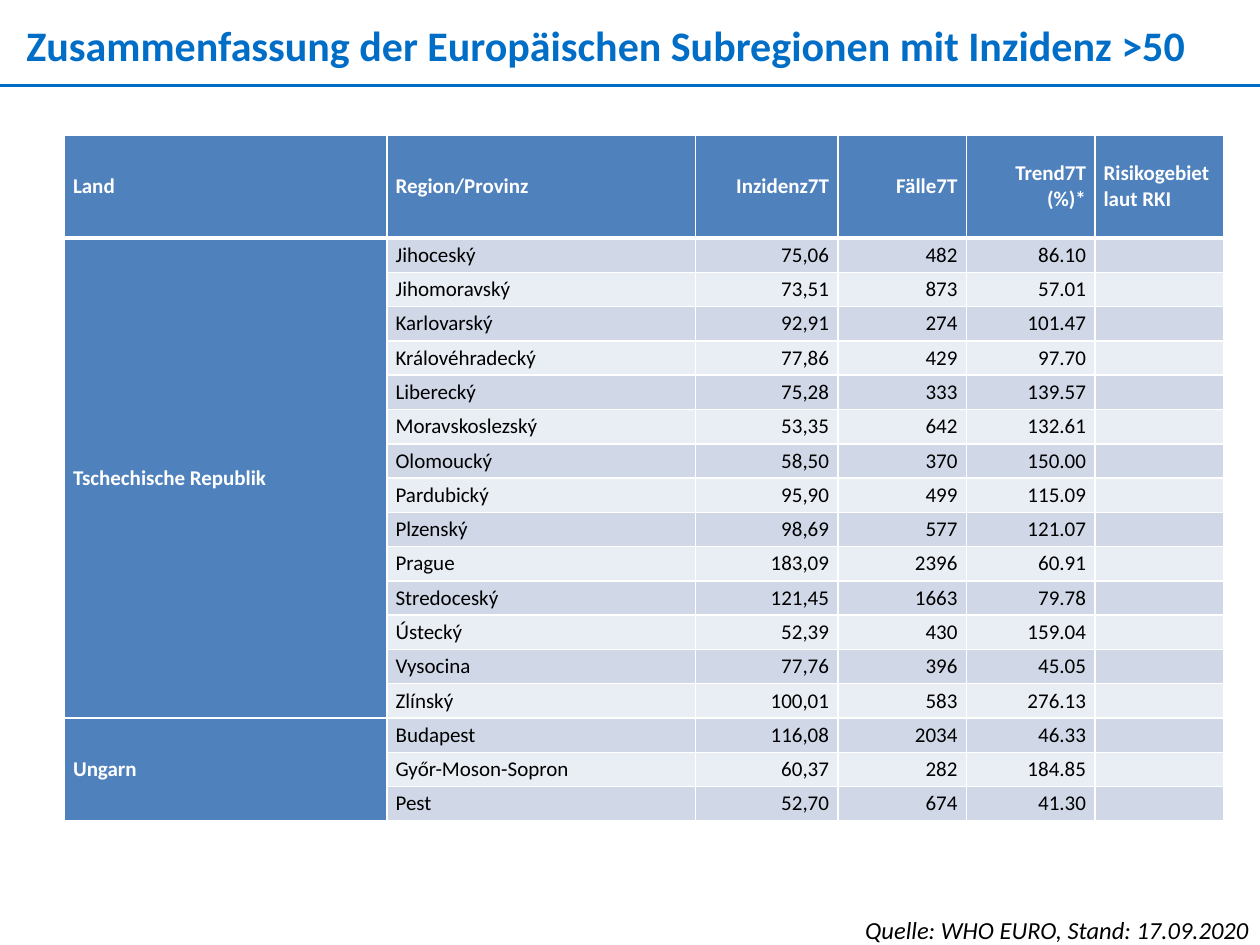
from dataclasses import dataclass

from lxml import etree
from pptx import Presentation
from pptx.dml.color import RGBColor
from pptx.enum.shapes import MSO_CONNECTOR
from pptx.enum.text import MSO_ANCHOR as Anchor, MSO_AUTO_SIZE as AutoSize, PP_ALIGN as Align
from pptx.oxml.ns import qn
from pptx.util import Emu, Inches, Pt


@dataclass(frozen=True)
class Theme:
    font: str = "Calibri"
    accent: str = "006EC7"
    header: str = "4F81BD"
    bands: tuple = ("D0D8E8", "E9EDF4")
    white: str = "FFFFFF"
    black: str = "000000"
    title: int = 24
    source: int = 14
    cell: int = 12


T = Theme()
W, H = Inches(10), Inches(7.5)
INDENT = Inches(0.07)
COLS = (2.56, 2.45, 1.13, 1.02, 1.02, 1.02)
HEADER_H, BODY_H = 0.82, 4.63
ALIGNS = (Align.LEFT, Align.LEFT, Align.RIGHT, Align.RIGHT, Align.RIGHT, Align.LEFT)
HEADERS = ("Land", "Region/Provinz", "Inzidenz7T", "Fälle7T",
           "Trend7T (%)*", "Risikogebiet laut RKI")
REGIONS = {
    "Tschechische Republik": (
        ("Jihoceský", "75,06", "482", "86.10"),
        ("Jihomoravský", "73,51", "873", "57.01"),
        ("Karlovarský", "92,91", "274", "101.47"),
        ("Královéhradecký", "77,86", "429", "97.70"),
        ("Liberecký", "75,28", "333", "139.57"),
        ("Moravskoslezský", "53,35", "642", "132.61"),
        ("Olomoucký", "58,50", "370", "150.00"),
        ("Pardubický", "95,90", "499", "115.09"),
        ("Plzenský", "98,69", "577", "121.07"),
        ("Prague", "183,09", "2396", "60.91"),
        ("Stredoceský", "121,45", "1663", "79.78"),
        ("Ústecký", "52,39", "430", "159.04"),
        ("Vysocina", "77,76", "396", "45.05"),
        ("Zlínský", "100,01", "583", "276.13"),
    ),
    "Ungarn": (
        ("Budapest", "116,08", "2034", "46.33"),
        ("Győr-Moson-Sopron", "60,37", "282", "184.85"),
        ("Pest", "52,70", "674", "41.30"),
    ),
}


def rgb(color):
    return RGBColor.from_string(color)


def write(tf, text, *, size, color=T.black, bold=False, italic=False,
          align=Align.LEFT, space=0, indent=0):
    p = tf.paragraphs[0]
    p.alignment = align
    p.space_before = p.space_after = Pt(space)
    for side in ("marL", "marR"):
        p._p.get_or_add_pPr().set(side, str(indent))
    if not text:
        # An empty cell keeps the row height through its end mark
        etree.SubElement(p._p, qn("a:endParaRPr"), sz=str(size * 100))
        return
    r = p.add_run()
    r.text = text
    f = r.font
    f.name, f.size, f.bold, f.italic = T.font, Pt(size), bold, italic
    f.color.rgb = rgb(color)


def set_margins(box, x=0, y=0):
    box.margin_left = box.margin_right = x
    box.margin_top = box.margin_bottom = y


def add_text(slide, text, left, top, width, height, margins=(0, 0), **fmt):
    tf = slide.shapes.add_textbox(left, top, width, height).text_frame
    tf.word_wrap = True
    tf.auto_size = AutoSize.SHAPE_TO_FIT_TEXT
    set_margins(tf, *margins)
    write(tf, text, **fmt)


def add_rule(slide, y):
    s = slide.shapes.add_connector(MSO_CONNECTOR.STRAIGHT, 0, y, W, y)
    s.line.color.rgb = rgb(T.accent)
    s.line.width = Pt(1.5)
    etree.SubElement(s._element.spPr, qn("a:effectLst"))


def set_borders(cell, top=1, bottom=1):
    tcPr = cell._tc.get_or_add_tcPr()
    widths = {"lnL": 1, "lnR": 1, "lnT": top, "lnB": bottom}
    for i, (tag, width) in enumerate(widths.items()):
        ln = etree.Element(qn(f"a:{tag}"), w=str(Pt(width)))
        fill = etree.SubElement(ln, qn("a:solidFill"))
        etree.SubElement(fill, qn("a:srgbClr"), val=T.white)
        tcPr.insert(i, ln)


def fill_cell(cell, text, fill, align, **fmt):
    cell.fill.solid()
    cell.fill.fore_color.rgb = rgb(fill)
    cell.vertical_anchor = Anchor.MIDDLE
    set_margins(cell)
    write(cell.text_frame, text, size=T.cell, align=align, space=2, indent=INDENT, **fmt)


def add_region_table(slide, left, top):
    rows = [HEADERS]
    for country, regions in REGIONS.items():
        rows += [(country if i == 0 else "", *region, "")
                 for i, region in enumerate(regions)]
    table = slide.shapes.add_table(len(rows), len(COLS), left, top, Inches(sum(COLS)),
                                   Inches(HEADER_H + BODY_H)).table
    for col, width in zip(table.columns, COLS):
        col.width = Inches(width)
    for i, row in enumerate(table.rows):
        row.height = Inches(BODY_H / (len(rows) - 1) if i else HEADER_H)

    # Header row and country column share one look, the body is banded
    for i, values in enumerate(rows):
        for j, (text, align) in enumerate(zip(values, ALIGNS)):
            cell = table.cell(i, j)
            head = i == 0 or j == 0
            fill_cell(cell, text, T.header if head else T.bands[(i - 1) % 2], align,
                      color=T.white if head else T.black, bold=head)
            set_borders(cell, top=3 if i == 1 else 1, bottom=3 if i == 0 else 1)

    # One merged cell per country
    first = 1
    for regions in REGIONS.values():
        last = first + len(regions) - 1
        table.cell(first, 0).merge(table.cell(last, 0))
        first = last + 1


def main():
    prs = Presentation()
    prs.slide_width, prs.slide_height = W, H
    slide = prs.slides.add_slide(prs.slide_layouts[6])

    # Title with rule
    add_text(slide, "Zusammenfassung der Europäischen Subregionen mit Inzidenz >50",
             Emu(int(W * 0.021)), Emu(int(H * 0.021)), Emu(int(W * 0.963)), Inches(0.4),
             size=T.title, color=T.accent, bold=True)
    add_rule(slide, Inches(0.68))

    # Regions by country
    add_region_table(slide, Inches(0.51), Inches(1.07))

    # Source
    add_text(slide, "Quelle: WHO EURO, Stand: 17.09.2020",
             Emu(int(W * 0.539)), Inches(7.21), Emu(int(W * 0.462)), Inches(0.34),
             margins=(Inches(0.1), Inches(0.05)),
             size=T.source, italic=True, align=Align.RIGHT)

    prs.save("out.pptx")


if __name__ == "__main__":
    main()
